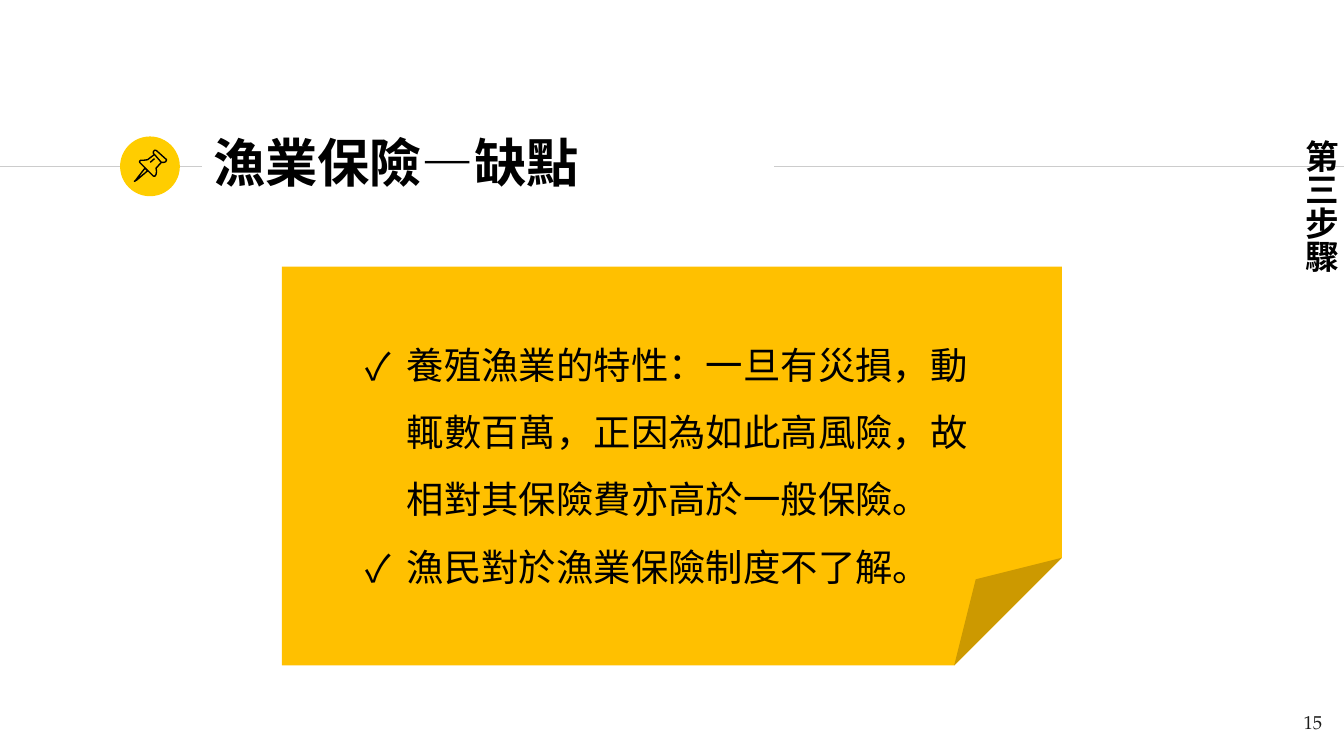
from lxml import etree
from pptx import Presentation
from pptx.dml.color import RGBColor
from pptx.enum.shapes import MSO_CONNECTOR, MSO_SHAPE
from pptx.enum.text import MSO_AUTO_SIZE, PP_ALIGN
from pptx.oxml.ns import qn
from pptx.util import Cm, Pt

STRAIGHT = MSO_CONNECTOR.STRAIGHT
ELLIPSE = MSO_SHAPE.OVAL
FOLDED_CORNER = MSO_SHAPE.FOLDED_CORNER
FIT_TEXT = MSO_AUTO_SIZE.SHAPE_TO_FIT_TEXT
FIXED_SIZE = MSO_AUTO_SIZE.NONE
RIGHT = PP_ALIGN.RIGHT

BLACK = RGBColor(0x00, 0x00, 0x00)
DARK = RGBColor(0x1D, 0x1D, 0x1B)
GREY = RGBColor(0xCC, 0xCC, 0xCC)
YELLOW = RGBColor(0xFF, 0xCD, 0x00)
AMBER = RGBColor(0xFF, 0xC0, 0x00)

SANS = "Noto Sans CJK JP"
SERIF = "TeX Gyre Pagella"

RULE_Y = 3.15

# Pushpin outlines in hundredths of a centimetre: points, closed
PIN_PARTS = [
    # Needle
    ([(274, 318), (257, 340), (254, 343), (259, 340), (279, 323)], True),
    # Head
    ([(292, 292), (305, 307), (310, 307), (313, 306), (314, 304), (315, 302),
      (296, 285), (294, 284), (292, 284), (290, 287), (290, 290)], True),
    # Body
    ([(292, 292), (279, 302), (272, 303), (266, 303), (264, 305), (264, 307),
      (290, 333), (293, 333), (295, 330), (296, 324), (295, 318),
      (305, 307)], False),
    # Highlight
    ([(284, 307), (292, 300)], False),
]

DRAWBACKS = [
    "養殖漁業的特性：一旦有災損，動輒數百萬，正因為如此高風險，故相對其保險費亦高於一般保險。",
    "漁民對於漁業保險制度不了解。",
]


def add_rule(slide, start, end):
    rule = slide.shapes.add_connector(
        STRAIGHT, Cm(start), Cm(RULE_Y), Cm(end), Cm(RULE_Y))
    rule.line.color.rgb = GREY
    rule.line.width = Pt(0.75)
    etree.SubElement(rule._element.spPr, qn("a:effectLst"))


def add_filled_shape(slide, kind, left, top, width, height, color):
    shape = slide.shapes.add_shape(
        kind, Cm(left), Cm(top), Cm(width), Cm(height))
    shape.shadow.inherit = False
    shape.fill.solid()
    shape.fill.fore_color.rgb = color
    shape.line.fill.background()
    return shape


def set_fold(shape, share):
    geometry = shape._element.spPr.find(qn("a:prstGeom"))
    guides = geometry.get_or_add_avLst()
    etree.SubElement(guides, qn("a:gd"), name="adj",
                     fmla=f"val {round(share * 100000)}")


def add_pin(slide):
    group = slide.shapes.add_group_shape()
    for points, closed in PIN_PARTS:
        builder = group.shapes.build_freeform(*points[0], scale=Cm(0.01))
        builder.add_line_segments(points[1:], close=closed)
        outline = builder.convert_to_shape()
        outline.shadow.inherit = False
        outline.fill.background()
        outline.line.color.rgb = BLACK
        outline.line.width = Pt(0.75)


def add_text(slide, left, top, width, height, lines, size, color=BLACK,
             latin=SANS, bold=False, wrap=False):
    box = slide.shapes.add_textbox(Cm(left), Cm(top), Cm(width), Cm(height))
    frame = box.text_frame
    frame.text = "\n".join(lines)
    frame.word_wrap = wrap
    frame.auto_size = FIT_TEXT
    for paragraph in frame.paragraphs:
        for run in paragraph.runs:
            run.font.size = Pt(size)
            run.font.bold = bold
            run.font.color.rgb = color
            run.font.name = latin
            etree.SubElement(run._r.get_or_add_rPr(), qn("a:ea"),
                             typeface=SANS)
    return frame


def add_check_mark(paragraph):
    properties = paragraph._p.get_or_add_pPr()
    properties.set("marL", str(Cm(0.79)))
    properties.set("indent", str(-Cm(0.79)))
    color = etree.SubElement(properties, qn("a:buClr"))
    etree.SubElement(color, qn("a:srgbClr"), val=str(BLACK))
    etree.SubElement(properties, qn("a:buFont"), typeface=SANS)
    etree.SubElement(properties, qn("a:buChar"), char="✓")


def main():
    presentation = Presentation()
    presentation.slide_width = Cm(25.4)
    presentation.slide_height = Cm(14.29)
    slide = presentation.slides.add_slide(presentation.slide_layouts[6])

    # Heading rules and badge
    add_rule(slide, 0, 3.82)
    add_filled_shape(slide, ELLIPSE, 2.27, 2.58, 1.13, 1.13, YELLOW)
    add_rule(slide, 14.63, 25.4)

    # Sticky note
    note = add_filled_shape(
        slide, FOLDED_CORNER, 5.33, 5.04, 14.74, 7.54, AMBER)
    set_fold(note, 0.27)

    add_pin(slide)

    # Page number
    number = add_text(slide, 23.72, 13.18, 1.52, 1.09, ["15"], 10,
                      color=DARK, latin=SERIF, wrap=True)
    number.auto_size = FIXED_SIZE
    number.margin_top = number.margin_bottom = Cm(0.25)
    number.paragraphs[0].alignment = RIGHT

    # Vertical step label
    step = add_text(slide, 24.21, 2.39, 1.27, 2.77, ["第三步驟"], 18, bold=True)
    step._txBody.bodyPr.set("vert", "eaVert")

    # Title: the dash takes the serif face
    add_text(slide, 3.78, 2.34, 7.49, 1.45, ["漁業保險—缺點"], 28,
             latin=SERIF, bold=True)

    # Checklist
    checklist = add_text(slide, 6.65, 5.92, 12.09, 5.26, DRAWBACKS, 20,
                         wrap=True)
    for paragraph in checklist.paragraphs:
        paragraph.line_spacing = 1.5
        add_check_mark(paragraph)

    presentation.save("out.pptx")


if __name__ == "__main__":
    main()
